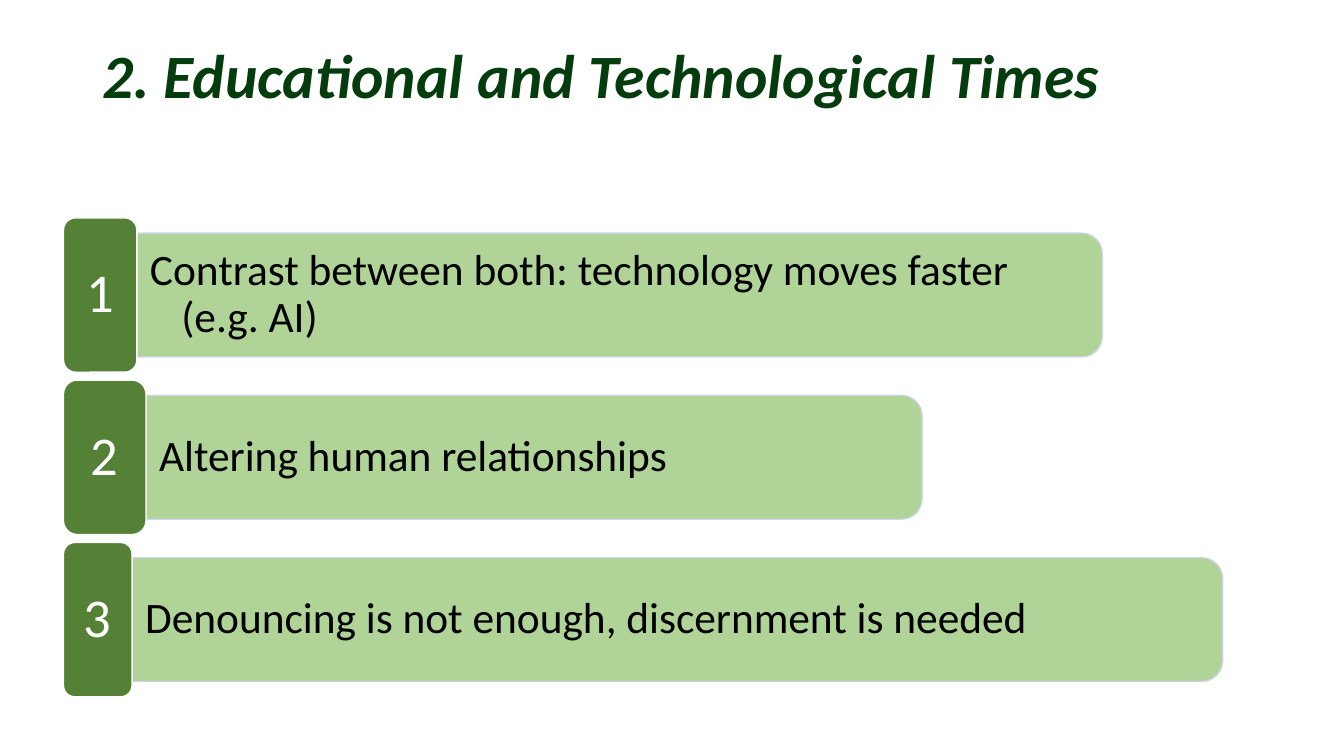
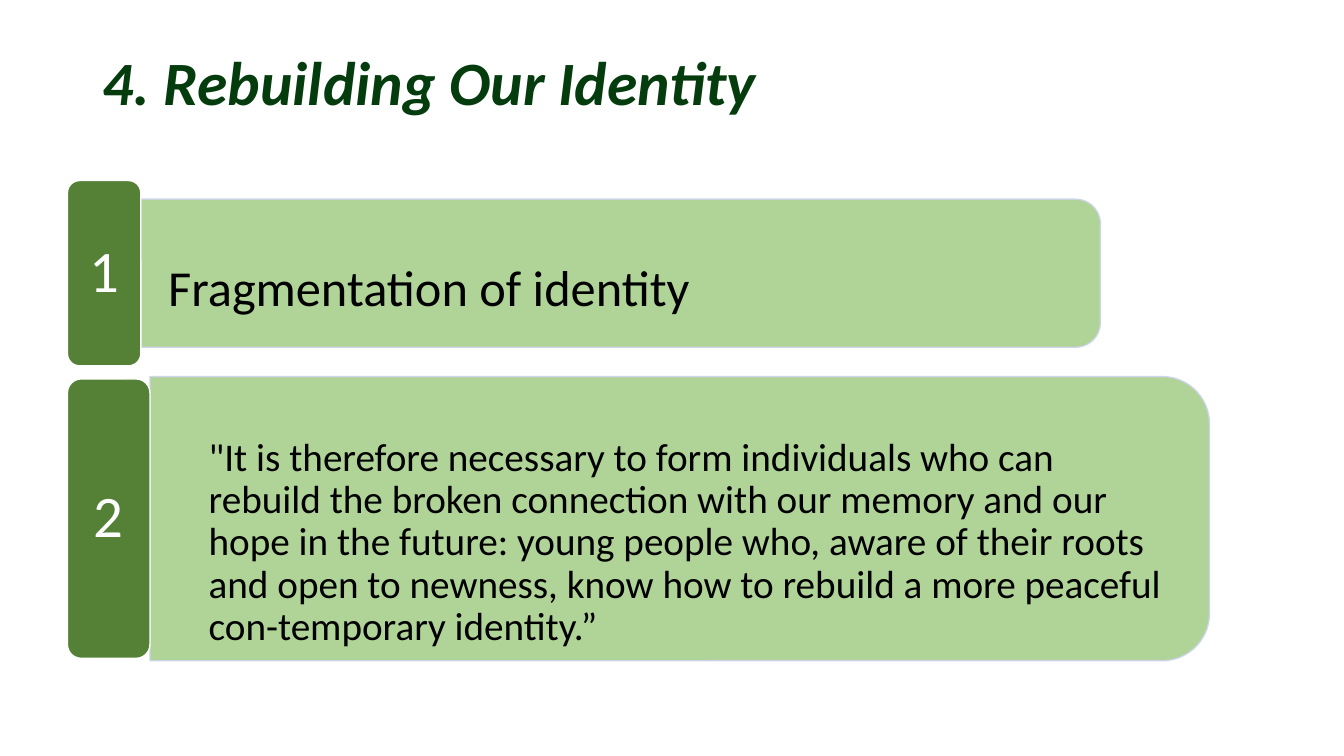
from pptx import Presentation
from pptx.dml.color import RGBColor
from pptx.enum.shapes import MSO_SHAPE
from pptx.enum.text import MSO_ANCHOR, MSO_AUTO_SIZE, PP_ALIGN
from pptx.oxml.ns import qn
from pptx.util import Cm, Pt
from lxml.etree import SubElement

TITLE_GREEN = RGBColor(0x05, 0x3C, 0x0E)
TILE_GREEN = RGBColor(0x54, 0x81, 0x35)
BAND_GREEN = RGBColor(0xA8, 0xD0, 0x8C)
BAND_EDGE = RGBColor(0xCC, 0xD3, 0xEA)
WHITE = RGBColor(0xFF, 0xFF, 0xFF)
BLACK = RGBColor(0, 0, 0)

FONT = "Calibri"
TITLE_FORMAT = {"size": Pt(44), "bold": True, "italic": True}
HANG = 0.79


class Deck:
    def __init__(self):
        self.prs = Presentation()
        self.prs.slide_width, self.prs.slide_height = Cm(33.87), Cm(19.05)
        self.s = None

    def slide(self, title, top):
        self.s = self.prs.slides.add_slide(self.prs.slide_layouts[5])
        sp = self.s.shapes.title
        sp.left, sp.top, sp.width, sp.height = Cm(2.33), Cm(top), Cm(29.21), Cm(3.68)
        self.set_text(sp, title, TITLE_GREEN, TITLE_FORMAT,
                      anchor=MSO_ANCHOR.TOP, insets=(0.25, 0.13))

    def set_text(self, sp, text, color, font, align=PP_ALIGN.LEFT,
                 anchor=MSO_ANCHOR.MIDDLE, insets=(0, 0)):
        """Fill a shape with one paragraph; insets are (side, top and bottom) in cm."""
        tf = sp.text_frame
        side, vertical = Cm(insets[0]), Cm(insets[1])
        frame = {"word_wrap": True, "auto_size": MSO_AUTO_SIZE.NONE,
                 "vertical_anchor": anchor, "margin_left": side, "margin_right": side,
                 "margin_top": vertical, "margin_bottom": vertical}
        for name, value in frame.items():
            setattr(tf, name, value)
        p = tf.paragraphs[0]
        p.alignment, p.line_spacing = align, 0.9
        r = p.add_run()
        r.text = text
        for name, value in {"name": FONT, **font}.items():
            setattr(r.font, name, value)
        r.font.color.rgb = color
        return p

    def box(self, kind, left, top, width, height, fill, edge, alpha=None):
        sp = self.s.shapes.add_shape(kind, Cm(left), Cm(top), Cm(width), Cm(height))
        sp.shadow.inherit = False
        sp.fill.solid()
        sp.fill.fore_color.rgb = fill
        sp.line.color.rgb = edge
        sp.line.width = Pt(1)
        if alpha:
            for clr in sp._element.spPr.iter(qn("a:srgbClr")):
                SubElement(clr, qn("a:alpha"), val=str(alpha * 1000))
        return sp

    def tile(self, left, top, width, height, number, size):
        sp = self.box(MSO_SHAPE.ROUNDED_RECTANGLE, left, top, width, height,
                      TILE_GREEN, WHITE)
        self.set_text(sp, number, WHITE, {"size": Pt(size)}, PP_ALIGN.CENTER)

    def band(self, left, middle, width, height):
        """Draw a band with round right corners: an upright shape turned by 90 degrees."""
        sp = self.box(MSO_SHAPE.ROUND_2_SAME_RECTANGLE,
                      left + (width - height) / 2, middle - width / 2, height, width,
                      BAND_GREEN, BAND_EDGE, alpha=90)
        sp.rotation = 90

    def row(self, number, text, left, top, tile, band, number_size, text_size,
            inset, drop=0, hanging=True):
        """Draw a numbered tile and its band; drop lowers the middle of the text."""
        tile_w, tile_h = tile
        band_w, band_h = band
        band_left, middle = left + tile_w, top + tile_h / 2
        self.band(band_left, middle, band_w, band_h)
        self.tile(left, top, tile_w, tile_h, number, number_size)
        corner = 0.05 * band_h
        tb = self.s.shapes.add_textbox(
            Cm(band_left), Cm(middle - band_h / 2 + 2 * drop),
            Cm(band_w - corner), Cm(band_h - 2 * drop))
        p = self.set_text(tb, text, BLACK, {"size": Pt(text_size)}, insets=(inset, 0))
        pPr = p._p.get_or_add_pPr()
        pPr.set("marL", str(Cm(HANG)))
        pPr.set("indent", str(-Cm(HANG) if hanging else 0))


def main():
    deck = Deck()

    deck.slide("2. Educational and Technological Times", 1.02)
    points = [
        ("Contrast between both: technology moves faster (e.g. AI)", 1.85, 24.33),
        ("Altering human relationships", 2.08, 19.56),
        ("Denouncing is not enough, discernment is needed", 1.73, 27.48),
    ]
    for i, (text, tile_w, band_w) in enumerate(points):
        deck.row(str(i + 1), text, 1.6, 5.49 + 4.09 * i, (tile_w, 3.89), (band_w, 3.12),
                 number_size=39, text_size=31, inset=0.33)

    deck.slide("4. Rebuilding Our Identity", 1.19)
    identity = {"left": 1.7, "number_size": 42, "inset": 0.69}
    deck.row("1", "Fragmentation of identity", top=4.55, tile=(1.85, 4.67),
             band=(24.18, 3.73), text_size=36, drop=0.44, **identity)
    deck.row("2", "\"It is therefore necessary to form individuals who can rebuild the "
             "broken connection with our memory and our hope in the future: young people "
             "who, aware of their roots and open to newness, know how to rebuild a more "
             "peaceful con-temporary identity.”", top=9.55, tile=(2.08, 7.04),
             band=(26.7, 7.16), text_size=28, drop=0.62, hanging=False, **identity)

    deck.prs.save("out.pptx")


if __name__ == "__main__":
    main()
